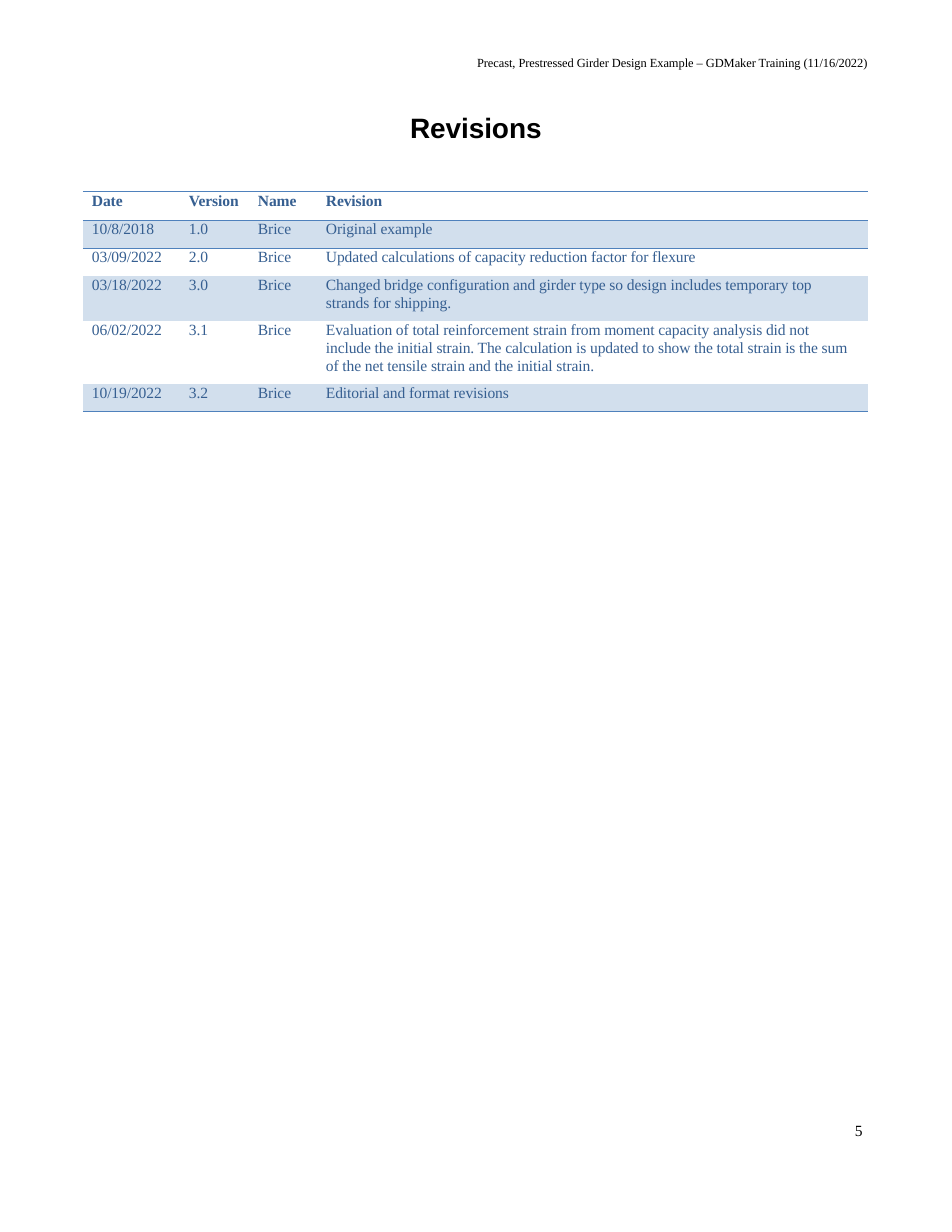
"""Build the revision history page of a girder design example."""
from pptx import Presentation
from pptx.dml.color import RGBColor
from pptx.enum.text import MSO_ANCHOR, PP_ALIGN
from pptx.oxml.ns import qn
from pptx.util import Emu, Pt
from lxml import etree

TOP, LEFT = MSO_ANCHOR.TOP, PP_ALIGN.LEFT
BLACK = RGBColor(0x00, 0x00, 0x00)
NAVY = RGBColor(0x36, 0x5F, 0x91)
RULE = RGBColor(0x4F, 0x81, 0xBC)
BAND = RGBColor(0xD2, 0xDF, 0xED)
SERIF, SANS = "Times New Roman", "Arial"
TITLE_FONT = {"name": SANS, "size": Pt(18), "bold": True}
HEADER_FONT = {"name": SERIF, "size": Pt(8), "bold": False}
BODY_FONT = {"name": SERIF, "size": Pt(10), "bold": False}
HEAD_FONT = {**BODY_FONT, "bold": True}

COLUMNS = [93, 73, 62, 557]
INDENTS = [9, 13, 9, 15]
ROW_HEIGHTS = [29, 28, 28, 45, 63, 27]
LINE_SPACING = [11.9, 11.8, 11.3, 11.5, 11.5, 11.3]
RULED_EDGES = {0, 1, 2, 6}
REVISIONS = [
    ("Date", "Version", "Name", "Revision"),
    ("10/8/2018", "1.0", "Brice", "Original example"),
    ("03/09/2022", "2.0", "Brice",
     "Updated calculations of capacity reduction factor for flexure"),
    ("03/18/2022", "3.0", "Brice",
     "Changed bridge configuration and girder type so design includes "
     "temporary top strands for shipping."),
    ("06/02/2022", "3.1", "Brice",
     "Evaluation of total reinforcement strain from moment capacity analysis "
     "did not include the initial strain. The calculation is updated to show "
     "the total strain is the sum of the net tensile strain and the initial "
     "strain."),
    ("10/19/2022", "3.2", "Brice", "Editorial and format revisions"),
]


def px(n):
    """Turn pixels into EMU at 112 pixels to the inch."""
    return Emu(round(n * 914400 / 112))


def write(tf, text, font, color, line_spacing=None):
    """Write one left-aligned, slightly tightened paragraph."""
    p = tf.paragraphs[0]
    p.alignment = LEFT
    p.line_spacing = line_spacing
    r = p.add_run()
    r.text = text
    for name, value in font.items():
        setattr(r.font, name, value)
    r.font.color.rgb = color
    r._r.get_or_add_rPr().set("spc", "-5")


def fill_box(sp, box, text, font, inset=(1, 2)):
    """Place a text shape and give it its insets and wording."""
    for name, value in zip(("left", "top", "width", "height"), box):
        setattr(sp, name, px(value))
    tf = sp.text_frame
    frame = {"margin_left": px(inset[0]), "margin_top": px(inset[1]),
             "margin_right": 0, "margin_bottom": 0,
             "word_wrap": True, "vertical_anchor": TOP}
    for name, value in frame.items():
        setattr(tf, name, value)
    write(tf, text, font, BLACK)


def set_border(cell, side, ruled):
    """Draw or clear one border of a cell."""
    ln = etree.SubElement(cell._tc.get_or_add_tcPr(), qn("a:ln" + side))
    if not ruled:
        etree.SubElement(ln, qn("a:noFill"))
        return
    ln.set("w", str(Pt(0.5)))
    fill = etree.SubElement(ln, qn("a:solidFill"))
    etree.SubElement(fill, qn("a:srgbClr")).set("val", str(RULE))


def format_cell(cell, row, col):
    """Set the insets, borders and band of a cell."""
    layout = {"margin_left": px(INDENTS[col]), "margin_right": 0,
              "margin_top": 0, "margin_bottom": 0, "vertical_anchor": TOP}
    if col == len(COLUMNS) - 1:
        layout["margin_right"] = px(18)
    for name, value in layout.items():
        setattr(cell, name, value)
    edges = {"L": False, "R": False,
             "T": row in RULED_EDGES, "B": row + 1 in RULED_EDGES}
    for side, ruled in edges.items():
        set_border(cell, side, ruled)
    if row % 2:
        cell.fill.solid()
        cell.fill.fore_color.rgb = BAND
    else:
        cell.fill.background()


def add_revisions(s):
    """Add the revision table."""
    table = s.shapes.add_table(
        len(REVISIONS), len(COLUMNS), px(83), px(191),
        px(sum(COLUMNS)), px(sum(ROW_HEIGHTS))).table
    table.horz_banding = False
    for column, width in zip(table.columns, COLUMNS):
        column.width = px(width)
    for i, values in enumerate(REVISIONS):
        table.rows[i].height = px(ROW_HEIGHTS[i])
        for j, text in enumerate(values):
            cell = table.cell(i, j)
            format_cell(cell, i, j)
            write(cell.text_frame, text, BODY_FONT if i else HEAD_FONT,
                  NAVY, Pt(LINE_SPACING[i]))


def main():
    """Assemble and save the page."""
    prs = Presentation()
    prs.slide_width, prs.slide_height = px(952), px(1232)
    s = prs.slides.add_slide(prs.slide_layouts[5])
    fill_box(s.shapes.title, (409, 109, 136, 37), "Revisions", TITLE_FONT)
    fill_box(s.shapes.add_textbox(0, 0, 0, 0), (476, 53, 400, 18),
             "Precast, Prestressed Girder Design Example – "
             "GDMaker Training (11/16/2022)", HEADER_FONT)
    add_revisions(s)
    fill_box(s.shapes.add_textbox(0, 0, 0, 0), (851, 1121, 22, 20),
             "5", BODY_FONT, (4, 0))
    prs.save("out.pptx")


if __name__ == "__main__":
    main()
